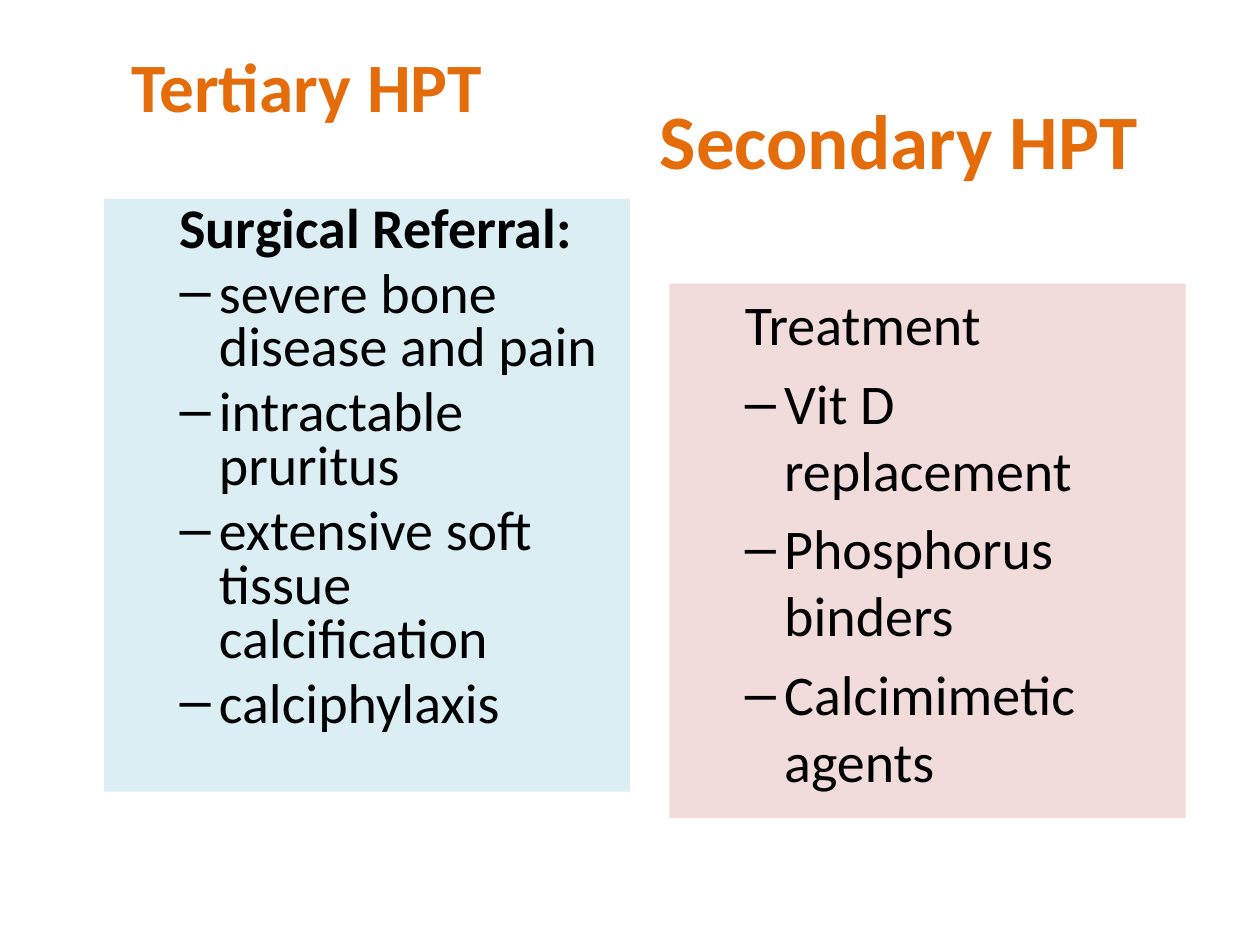
from lxml import etree
from pptx import Presentation
from pptx import util as u
from pptx.dml.color import RGBColor
from pptx.enum import shapes, text
from pptx.oxml import ns

ORANGE, BLACK = "E46C0A", "000000"
PALE_BLUE, PALE_PINK = "DBEEF4", "F2DCDB"
INDENT, HANG = 58.5, 22.5


def colour(value):
    return RGBColor.from_string(value)


def apply(target, values):
    for name, value in values.items():
        setattr(target, name, value)


class SlideBuilder:
    font = "Calibri"
    body_size = 32
    gap = 6.4

    def __init__(self, deck):
        self.page = deck.slides.add_slide(deck.slide_layouts[6])

    def add_span(self, para, words, size, hue, bold=False):
        span = para.add_run()
        span.text = words
        apply(span.font, {"name": self.font, "size": u.Pt(size), "bold": bold})
        span.font.color.rgb = colour(hue)

    def heading(self, words, place, size, align):
        box = self.page.shapes.add_textbox(*map(u.Pt, place))
        apply(box.text_frame, {"word_wrap": True,
                               "vertical_anchor": text.MSO_ANCHOR.MIDDLE})
        para = box.text_frame.paragraphs[0]
        para.alignment = align
        self.add_span(para, words, size, ORANGE, bold=True)

    def panel(self, place, fill, title, items, spacing=1.0, bold_title=False):
        box = self.page.shapes.add_shape(
            shapes.MSO_SHAPE.RECTANGLE, *map(u.Pt, place))
        box.shadow.inherit = False
        box.fill.solid()
        box.fill.fore_color.rgb = colour(fill)
        box.line.fill.background()
        frame = box.text_frame
        apply(frame, {"word_wrap": True,
                      "vertical_anchor": text.MSO_ANCHOR.TOP})
        for index, words in enumerate([title, *items]):
            para = frame.add_paragraph() if index else frame.paragraphs[0]
            apply(para, {"alignment": text.PP_ALIGN.LEFT,
                         "line_spacing": spacing,
                         "space_before": u.Pt(self.gap if index else 0)})
            self.indent(para, bullet="–" if index else None)
            self.add_span(para, words, self.body_size, BLACK,
                          bold=bold_title and not index)

    def indent(self, para, bullet):
        props = para._p.get_or_add_pPr()
        props.set("marL", str(u.Pt(INDENT)))
        props.set("indent", str(u.Pt(-HANG)))
        if bullet:
            font = etree.SubElement(props, ns.qn("a:buFont"))
            font.set("typeface", "Arial")
            mark = etree.SubElement(props, ns.qn("a:buChar"))
            mark.set("char", bullet)
        else:
            etree.SubElement(props, ns.qn("a:buNone"))


def main():
    deck = Presentation()
    apply(deck, {"slide_width": u.Pt(720), "slide_height": u.Pt(540)})
    slide = SlideBuilder(deck)

    # Left column: tertiary
    slide.heading("Tertiary HPT", (42.5, 20, 240, 57), 39.6,
                  text.PP_ALIGN.RIGHT)
    slide.panel((59.5, 113.6, 300.5, 338.7), PALE_BLUE, "Surgical Referral:",
                ["severe bone disease and pain", "intractable pruritus",
                 "extensive soft tissue calcification", "calciphylaxis"],
                spacing=0.8, bold_title=True)

    # Right column: secondary
    slide.panel((382.5, 162, 295, 305.5), PALE_PINK, "Treatment",
                ["Vit D replacement", "Phosphorus binders",
                 "Calcimimetic agents"])
    slide.heading("Secondary HPT", (347.7, 46, 332, 67), 44,
                  text.PP_ALIGN.CENTER)

    deck.save("out.pptx")


if __name__ == "__main__":
    main()
